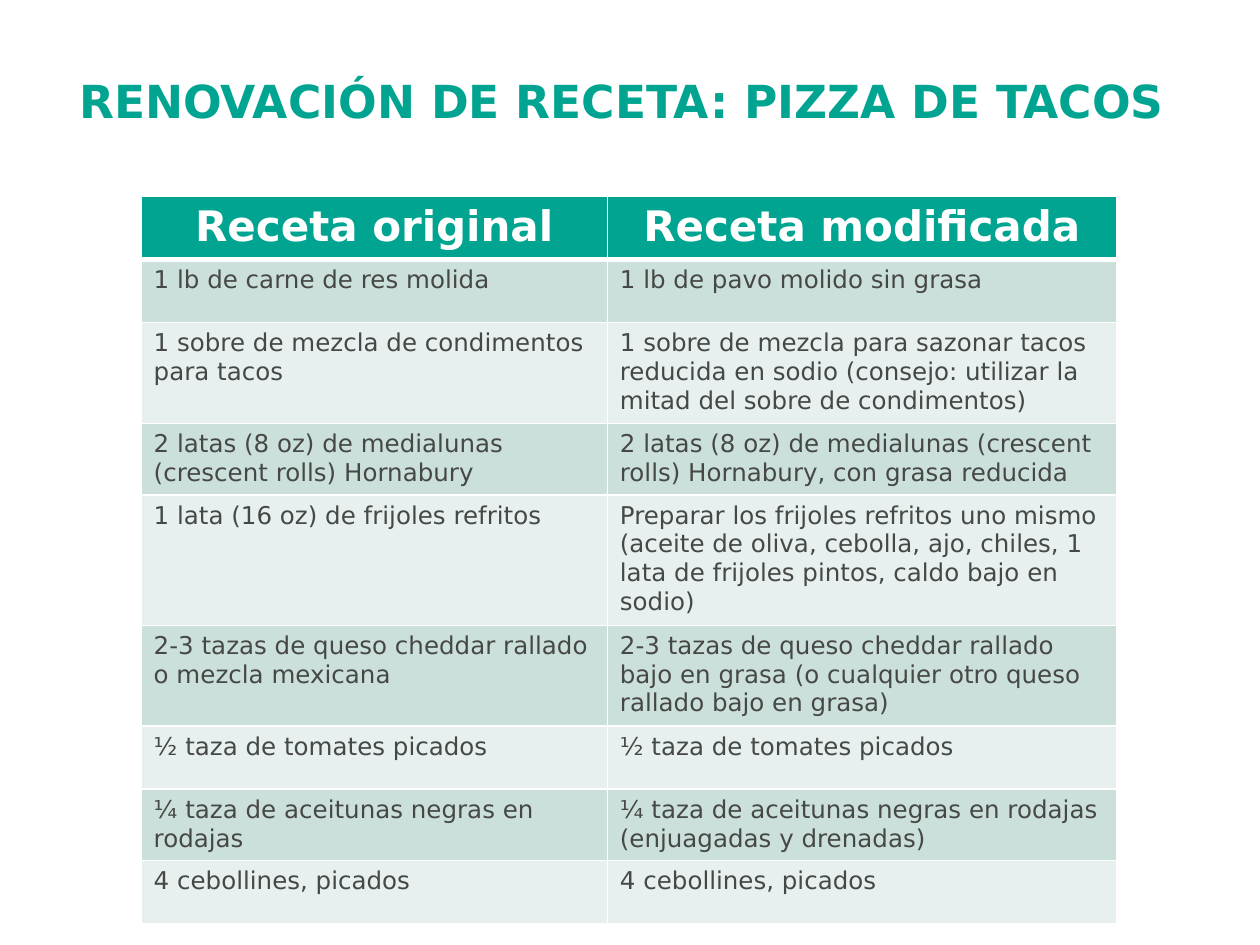
from dataclasses import dataclass

from lxml import etree
from pptx import Presentation
from pptx.dml.color import RGBColor
from pptx.enum import text
from pptx.oxml import ns
from pptx.util import Inches, Pt

COLORS = {"teal": "01A490", "white": "FFFFFF", "ink": "464847",
          "band": "CCE0DB", "pale": "E7F0EE"}
FONT = "DejaVu Sans"
COL_WIDTHS = (3.7, 4.04)
ROW_HEIGHT = 0.5


@dataclass
class Style:
    """Look of a piece of text."""
    size: int
    color: str
    bold: bool = False
    align: text.PP_ALIGN = text.PP_ALIGN.LEFT


@dataclass
class Ingredient:
    """One line of the recipe, before and after."""
    original: str
    modified: str


TITLE = Style(26, "teal", True)
HEADER = Style(24, "white", True, text.PP_ALIGN.CENTER)
BODY = Style(14, "ink")

ROWS = [
    Ingredient("Receta original", "Receta modificada"),
    Ingredient("1 lb de carne de res molida", "1 lb de pavo molido sin grasa"),
    Ingredient("1 sobre de mezcla de condimentos para tacos",
               "1 sobre de mezcla para sazonar tacos reducida en sodio "
               "(consejo: utilizar la mitad del sobre de condimentos)"),
    Ingredient("2 latas (8 oz) de medialunas (crescent rolls) Hornabury",
               "2 latas (8 oz) de medialunas (crescent rolls) Hornabury, con grasa reducida"),
    Ingredient("1 lata (16 oz) de frijoles refritos",
               "Preparar los frijoles refritos uno mismo (aceite de oliva, cebolla, "
               "ajo, chiles, 1 lata de frijoles pintos, caldo bajo en sodio)"),
    Ingredient("2-3 tazas de queso cheddar rallado o mezcla mexicana",
               "2-3 tazas de queso cheddar rallado bajo en grasa "
               "(o cualquier otro queso rallado bajo en grasa)"),
    Ingredient("½ taza de tomates picados", "½ taza de tomates picados"),
    Ingredient("¼ taza de aceitunas negras en rodajas",
               "¼ taza de aceitunas negras en rodajas (enjuagadas y drenadas)"),
    Ingredient("4 cebollines, picados", "4 cebollines, picados"),
]


def write(tf, words: str, style: Style) -> None:
    """Put styled words into a text frame."""
    tf.text = words
    p = tf.paragraphs[0]
    p.alignment = style.align
    font = p.runs[0].font
    font.name, font.size, font.bold = FONT, Pt(style.size), style.bold
    font.color.rgb = RGBColor.from_string(COLORS[style.color])


def set_borders(cell, widths: dict) -> None:
    """Draw white cell borders, with widths in points by side."""
    props = cell._tc.get_or_add_tcPr()
    for i, (side, width) in enumerate(widths.items()):
        ln = etree.Element(ns.qn(f"a:ln{side}"), w=str(Pt(width)))
        fill = etree.SubElement(ln, ns.qn("a:solidFill"))
        etree.SubElement(fill, ns.qn("a:srgbClr"), val=COLORS["white"])
        props.insert(i, ln)


def add_title(s, words: str) -> None:
    """Add the slide title."""
    tf = s.shapes.add_textbox(Inches(0.53), Inches(0.53), Inches(9.16), Inches(0.92)).text_frame
    tf.word_wrap = True
    write(tf, words, TITLE)


def add_recipe_table(s, rows: list[Ingredient]) -> None:
    """Add the table comparing both recipes."""
    table = s.shapes.add_table(len(rows), len(COL_WIDTHS), Inches(1.12), Inches(1.56),
                               Inches(sum(COL_WIDTHS)), Inches(ROW_HEIGHT * len(rows))).table
    for column, width in zip(table.columns, COL_WIDTHS):
        column.width = Inches(width)
    for i, row in enumerate(rows):
        fill = "teal" if i == 0 else "band" if i % 2 else "pale"
        widths = {"L": 1, "R": 1, "T": 3 if i == 1 else 1, "B": 3 if i == 0 else 1}
        for j, words in enumerate((row.original, row.modified)):
            cell = table.cell(i, j)
            write(cell.text_frame, words, BODY if i else HEADER)
            cell.fill.solid()
            cell.fill.fore_color.rgb = RGBColor.from_string(COLORS[fill])
            set_borders(cell, widths)


def main() -> None:
    """Build and save the recipe slide."""
    prs = Presentation()
    prs.slide_width, prs.slide_height = Inches(10), Inches(7.5)
    s = prs.slides.add_slide(prs.slide_layouts[6])
    add_title(s, "RENOVACIÓN DE RECETA: PIZZA DE TACOS")
    add_recipe_table(s, ROWS)
    prs.save("out.pptx")


if __name__ == "__main__":
    main()
